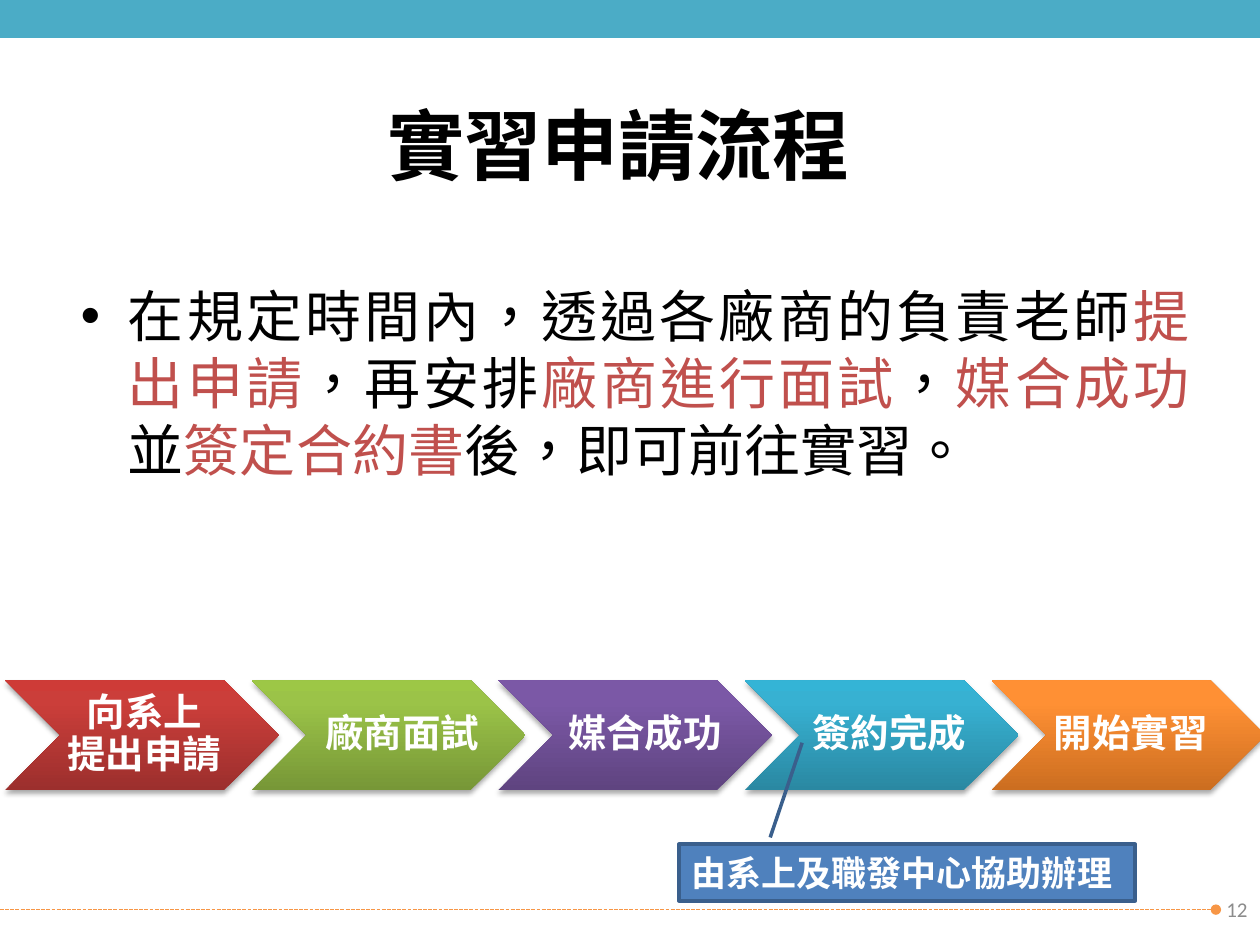
from dataclasses import dataclass

from lxml import etree
from pptx import Presentation
from pptx import util as u
from pptx.dml.color import RGBColor
from pptx.enum import shapes, text
from pptx.oxml.ns import qn

COLORS = {
    "black": "000000", "white": "FFFFFF", "red": "C0504D", "gray": "8C8C8C",
    "teal": "4BACC6", "orange": "F79646", "blue": "4F81BD", "navy": "3A5F8C",
}
CJK = "Noto Sans CJK SC"
STEP_TOP, STEP_WIDTH, STEP_HEIGHT = 388.8, 156.4, 62.6
STEP_LEFT, STEP_PITCH = 3, 140.9


@dataclass
class Area:
    left: float
    top: float
    width: float
    height: float

    def points(self) -> tuple:
        return tuple(u.Pt(value) for value in (self.left, self.top, self.width, self.height))


@dataclass
class Step:
    label: str
    label_offset: float
    dark: str
    middle: str
    light: str
    label_width: float = 109.4


STEPS = [
    Step("向系上\v提出申請", 22.3, "9C2F2D", "CB3E3A", "CE3B37"),
    Step("廠商面試", 28.8, "779737", "9BC348", "9DC746"),
    Step("媒合成功", 26.6, "5F4480", "7B58A6", "7C57A8"),
    Step("簽約完成", 25.2, "2A88A2", "37B1D2", "34B4D6"),
    Step("開始實習", 20.2, "CC6E20", "FF9034", "FF9136", 113.8),
]
BODY = [
    ("在規定時間內，透過各廠商的負責老師", "black"), ("提出申請", "red"),
    ("，再安排", "black"), ("廠商進行面試", "red"), ("，", "black"),
    ("媒合成功", "red"), ("並", "black"), ("簽定合約書", "red"),
    ("後，即可前往實習。", "black"),
]


def rgb(name: str) -> RGBColor:
    return RGBColor.from_string(COLORS[name])


def place(shape, area: Area) -> None:
    shape.left, shape.top, shape.width, shape.height = area.points()


def style_span(span, size: float, color: str, bold: bool = False, face: str = CJK) -> None:
    span.font.size, span.font.bold, span.font.name = u.Pt(size), bold, face
    span.font.color.rgb = rgb(color)
    properties = span._r.get_or_add_rPr()
    properties.set("lang", "zh-TW")
    etree.SubElement(properties, qn("a:ea"), typeface=face)


def write(shape, words: str, size: float, color: str, align, bold: bool = True, face: str = CJK):
    frame = shape.text_frame
    frame.word_wrap = True
    frame.auto_size = text.MSO_AUTO_SIZE.NONE
    frame.vertical_anchor = text.MSO_ANCHOR.MIDDLE
    para = frame.paragraphs[0]
    para.text = words
    para.alignment = align
    for span in para.runs:
        style_span(span, size, color, bold, face)
    return para


def add_block(page, preset, area: Area, fill: str, line: str):
    block = page.shapes.add_shape(preset, *area.points())
    block.shadow.inherit = False
    block.fill.solid()
    block.fill.fore_color.rgb = rgb(fill)
    block.line.color.rgb = rgb(line)
    block.line.width = u.Pt(2)
    return block


def add_footer_line(page) -> None:
    rule = page.shapes.add_connector(
        shapes.MSO_CONNECTOR.STRAIGHT, 0, u.Pt(519.8), u.Pt(694.8), u.Pt(519.8))
    rule.line.color.rgb = rgb("orange")
    rule.line.width = u.Pt(0.75)
    outline = rule.line._get_or_add_ln()
    etree.SubElement(outline, qn("a:prstDash"), val="sysDash")
    etree.SubElement(outline, qn("a:tailEnd"), type="oval")
    etree.SubElement(rule._element.spPr, qn("a:effectLst"))


def add_step(page, step: Step, left: float) -> None:
    area = Area(left, STEP_TOP, STEP_WIDTH, STEP_HEIGHT)
    arrow = page.shapes.add_shape(shapes.MSO_SHAPE.CHEVRON, *area.points())
    arrow.line.fill.background()
    arrow.fill.gradient()
    arrow.fill.gradient_angle = 90
    properties = arrow._element.spPr
    stops = properties.find(".//" + qn("a:gsLst"))
    for stop in list(stops):
        stops.remove(stop)
    for percent, color in ((0, step.dark), (80, step.middle), (100, step.light)):
        stop = etree.SubElement(stops, qn("a:gs"), pos=str(percent * 1000))
        etree.SubElement(stop, qn("a:srgbClr"), val=color)
    arrow.shadow.inherit = False
    shadow = etree.SubElement(
        properties.find(qn("a:effectLst")), qn("a:outerShdw"),
        blurRad=str(u.Pt(3.1)), dist=str(u.Pt(1.8)), dir="5400000", rotWithShape="0")
    shade = etree.SubElement(shadow, qn("a:srgbClr"), val=COLORS["black"])
    etree.SubElement(shade, qn("a:alpha"), val="35000")

    label_area = Area(left + step.label_offset, STEP_TOP, step.label_width, STEP_HEIGHT)
    box = page.shapes.add_textbox(*label_area.points())
    para = write(box, step.label, 22, "white", text.PP_ALIGN.CENTER)
    para.line_spacing = 0.9
    frame = box.text_frame
    frame.margin_left = u.Pt(7.2)
    frame.margin_right = frame.margin_top = frame.margin_bottom = u.Pt(2.2)


def main() -> None:
    deck = Presentation()
    deck.slide_width, deck.slide_height = u.Pt(720), u.Pt(540)
    page = deck.slides.add_slide(deck.slide_layouts[1])
    title, body = page.placeholders

    add_footer_line(page)
    add_block(page, shapes.MSO_SHAPE.RECTANGLE, Area(0, 0, 720, 21), "teal", "teal")

    place(title, Area(29.5, 37.4, 648, 90))
    write(title, "實習申請流程", 44, "black", text.PP_ALIGN.CENTER)

    place(body, Area(38.9, 157, 648, 158.4))
    body.text_frame.auto_size = text.MSO_AUTO_SIZE.NONE
    para = body.text_frame.paragraphs[0]
    para.alignment = text.PP_ALIGN.JUSTIFY
    for words, color in BODY:
        span = para.add_run()
        span.text = words
        style_span(span, 32, color)

    for index, step in enumerate(STEPS):
        add_step(page, step, STEP_LEFT + index * STEP_PITCH)

    number = page.shapes.add_textbox(*Area(552.2, 505.4, 167.8, 28.8).points())
    write(number, "12", 12, "gray", text.PP_ALIGN.RIGHT, False, "Calibri")

    callout = add_block(
        page, shapes.MSO_SHAPE.LINE_CALLOUT_1, Area(388, 482.4, 260.6, 32.4), "blue", "navy")
    for index, value in enumerate((-0.12, 0.2, -1.79, 0.27)):
        callout.adjustments[index] = value
    write(callout, "由系上及職發中心協助辦理", 20, "white", text.PP_ALIGN.LEFT)

    deck.save("out.pptx")


if __name__ == "__main__":
    main()
